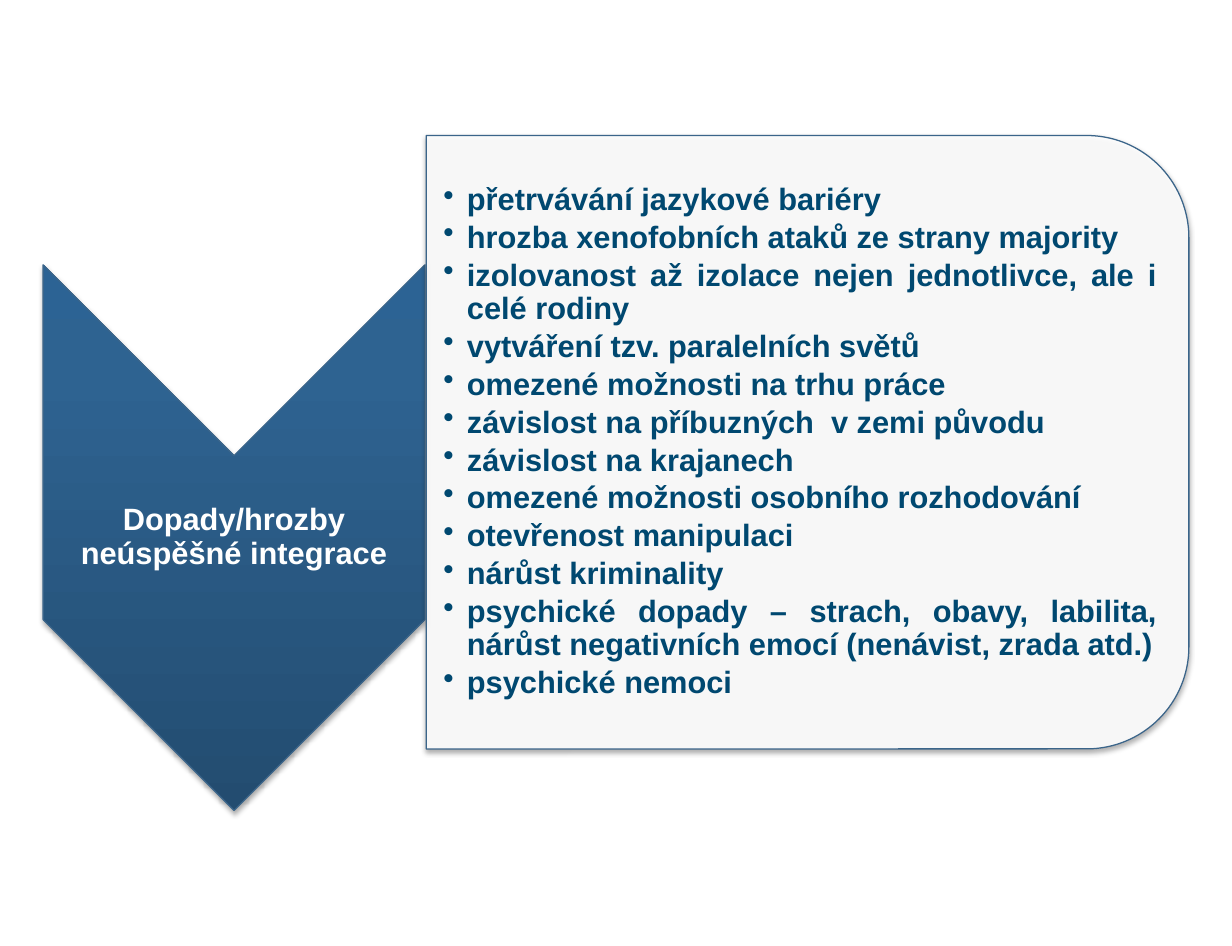
import pptx
import pptx.util
import pptx.dml.color
import pptx.enum.shapes
import pptx.enum.text
import pptx.oxml
import pptx.oxml.ns

WIDE, HIGH = 10, 7.68
NS = pptx.oxml.ns.nsdecls("a")
QN = pptx.oxml.ns.qn
INCH = pptx.util.Inches
KIND = pptx.enum.shapes.MSO_SHAPE
ALIGN = pptx.enum.text.PP_ALIGN
STOPS = ((0, "234C70"), (80, "2E6391"), (100, "2C6394"))
LABEL = "Dopady/hrozby neúspěšné integrace"
RISKS = (
    "přetrvávání jazykové bariéry",
    "hrozba xenofobních ataků ze strany majority",
    "izolovanost až izolace nejen jednotlivce, ale i celé rodiny",
    "vytváření tzv. paralelních světů",
    "omezené možnosti na trhu práce",
    "závislost na příbuzných  v zemi původu",
    "závislost na krajanech",
    "omezené možnosti osobního rozhodování",
    "otevřenost manipulaci",
    "nárůst kriminality",
    "psychické dopady – strach, obavy, labilita, nárůst negativních emocí (nenávist, zrada atd.)",
    "psychické nemoci",
)


def color(code):
    """Turn a hex string into a colour."""
    return pptx.dml.color.RGBColor.from_string(code)


def inner(box, left, top, wide, high):
    """Return the part of a box given by shares of its size."""
    x, y, w, h = box
    return x + left * w, y + top * h, wide * w, high * h


def turned(slide, kind, box):
    """Add an outlined, shadowed shape that fills the box after a quarter turn."""
    x, y, w, h = box
    shape = slide.shapes.add_shape(
        kind, INCH(x + (w - h) / 2), INCH(y + (h - w) / 2), INCH(h), INCH(w))
    shape.rotation = 90
    shape.line.color.rgb = color("3B658A")
    shape.line.width = pptx.util.Pt(0.75)
    shape.shadow.inherit = False
    shade = pptx.oxml.parse_xml(
        f'<a:outerShdw {NS} blurRad="39370" dist="22860" dir="5400000" rotWithShape="0">'
        '<a:srgbClr val="000000"><a:alpha val="35000"/></a:srgbClr></a:outerShdw>')
    shape._element.spPr.find(QN("a:effectLst")).append(shade)
    return shape


def write(slide, box, lines, code, align, after, inset, bullet=False):
    """Add a middle-anchored text box with one paragraph per line."""
    frame = slide.shapes.add_textbox(*map(INCH, box)).text_frame
    frame.word_wrap = True
    frame.vertical_anchor = pptx.enum.text.MSO_ANCHOR.MIDDLE
    frame.margin_left = INCH(inset)
    frame.margin_top = frame.margin_right = frame.margin_bottom = INCH(0.01)
    for index, line in enumerate(lines):
        para = frame.add_paragraph() if index else frame.paragraphs[0]
        para.alignment = align
        para.line_spacing = 0.9
        para.space_after = pptx.util.Pt(after)
        if bullet:
            para.level = 1
            props = para._p.get_or_add_pPr()
            props.set("marL", str(INCH(0.19)))
            props.set("indent", str(-INCH(0.19)))
            props.append(pptx.oxml.parse_xml(f'<a:buChar {NS} char="•"/>'))
        run = para.add_run()
        run.text = line
        run.font.name = "Arial"
        run.font.size = pptx.util.Pt(18)
        run.font.bold = True
        run.font.color.rgb = color(code)


def arrow(slide, box):
    """Draw the downward chevron with its label."""
    shape = turned(slide, KIND.CHEVRON, box)
    shape.fill.gradient()
    stops = "".join(f'<a:gs pos="{pos * 1000}"><a:srgbClr val="{code}"/></a:gs>'
                    for pos, code in STOPS)
    props = shape._element.spPr
    props.replace(props.find(QN("a:gradFill")), pptx.oxml.parse_xml(
        f'<a:gradFill {NS} rotWithShape="0"><a:gsLst>{stops}</a:gsLst>'
        '<a:lin ang="16200000" scaled="0"/></a:gradFill>'))
    write(slide, inner(box, 0, 0.35, 1, 0.3), [LABEL], "FFFFFF", ALIGN.CENTER, 6.3, 0.01)


def panel(slide, box):
    """Draw the rounded panel with its list of risks."""
    shape = turned(slide, KIND.ROUND_2_SAME_RECTANGLE, box)
    shape.fill.solid()
    shape.fill.fore_color.rgb = color("FFFFFF")
    tint = shape._element.spPr.find(QN("a:solidFill"))[0]
    tint.append(pptx.oxml.parse_xml(f'<a:alpha {NS} val="90000"/>'))
    write(slide, inner(box, 0, 0.05, 0.96, 0.9), RISKS, "004870", ALIGN.JUSTIFY,
          2.7, 0.14, True)


def main():
    """Build and save the slide."""
    deck = pptx.Presentation()
    deck.slide_width, deck.slide_height = INCH(WIDE), INCH(HIGH)
    slide = deck.slides.add_slide(deck.slide_layouts[6])
    arrow(slide, (0.35, 2.15, 3.1, 4.43))
    panel(slide, (3.46, 1.1, 6.19, 4.98))
    deck.save("out.pptx")


if __name__ == "__main__":
    main()
